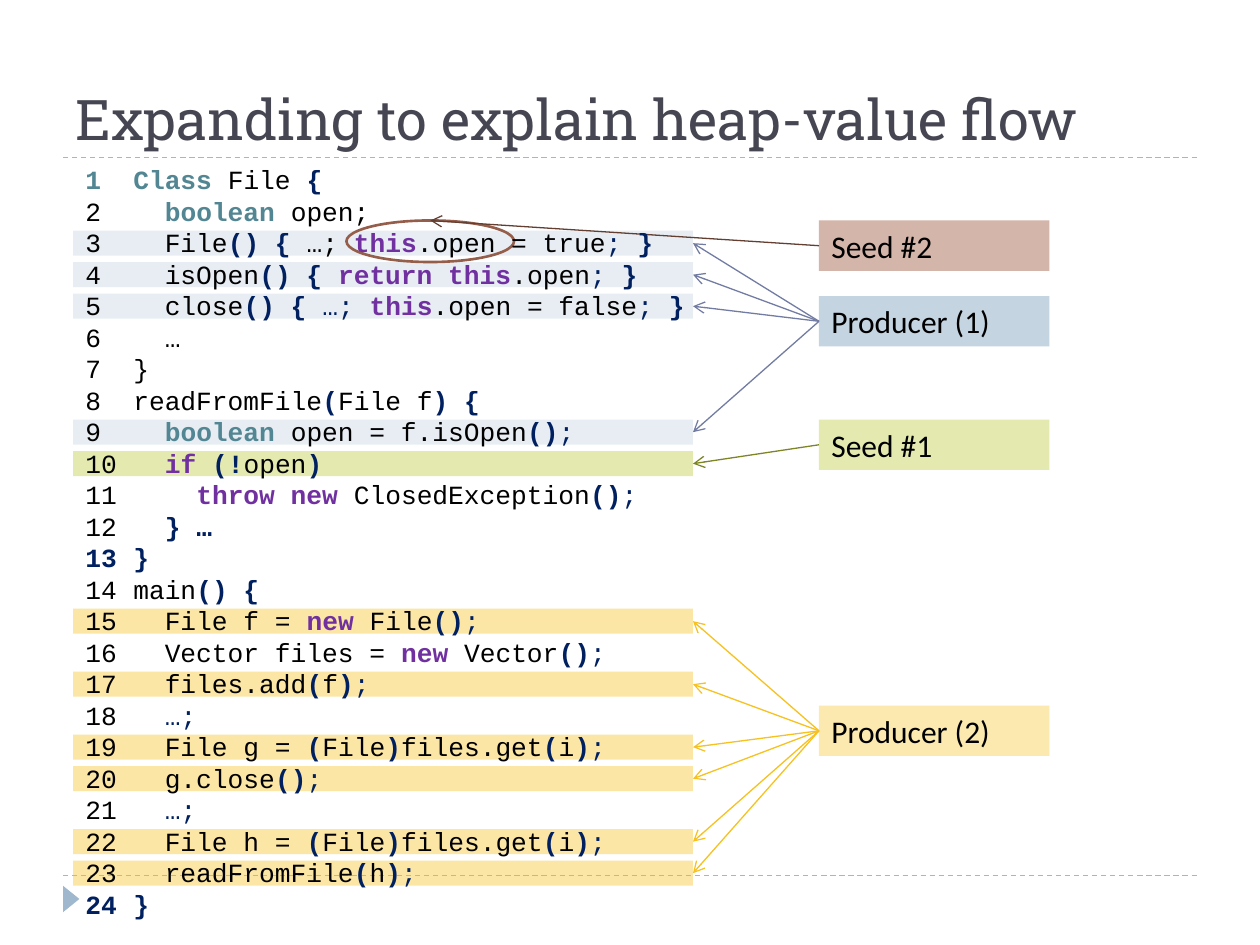
import pptx
import pptx.util
import pptx.dml.color
import pptx.enum.dml
import pptx.enum.shapes
import pptx.enum.text
import pptx.oxml.ns
import lxml.etree

Inch, Pt = pptx.util.Inches, pptx.util.Pt
RGB = pptx.dml.color.RGBColor
Shape = pptx.enum.shapes.MSO_SHAPE
Anchor = pptx.enum.text.MSO_ANCHOR
qn = pptx.oxml.ns.qn

BLACK = RGB(0, 0, 0)
NAVY = RGB(0x00, 0x20, 0x60)
TEAL = RGB(0x52, 0x86, 0x93)
PURPLE = RGB(0x70, 0x30, 0xA0)
SLATE = RGB(0x46, 0x46, 0x53)
STEEL = RGB(0x9F, 0xB8, 0xCD)
SKY = RGB(0xC5, 0xD4, 0xE1)
INDIGO = RGB(0x72, 0x7C, 0xA3)
GOLD = RGB(0xF7, 0xC1, 0x20)
CREAM = RGB(0xFC, 0xE9, 0xAF)
LIME = RGB(0xBC, 0xC8, 0x38)
PALE = RGB(0xE4, 0xE9, 0xAF)
OLIVE = RGB(0x7D, 0x85, 0x25)
ROSE = RGB(0xD4, 0xB5, 0xAA)
RUST = RGB(0x95, 0x5E, 0x4B)
BROWN = RGB(0x63, 0x3F, 0x32)

# Content: each code run is "style:text", runs are parted by "|"
TITLE = "Expanding to explain heap-value flow"
STYLES = {"k": (BLACK, False), "n": (NAVY, False), "b": (NAVY, True),
          "t": (TEAL, True), "p": (PURPLE, True)}
CODE = [
    "t:Class|k: File |b:{",
    "k:  |t:boolean|k: open;",
    "k:  File|b:() { |k:…; |p:this|k:.open = true|n:; |b:}",
    "k:  isOpen|b:() { |p:return this|k:.open|n:;|b: }",
    "k:  close|b:() { |n:…; |p:this|k:.open = false|n:; |b:}",
    "k:  …",
    "k:}",
    "k:readFromFile|b:(|k:File f|b:) {",
    "k:  |t:boolean|k: open = f.isOpen|b:()|n:;",
    "k:  |p:if |b:(!|k:open|b:)",
    "k:    |p:throw new |k:ClosedException|b:()|n:;",
    "k:  |b:} …",
    "b:}",
    "k:main|b:() {",
    "k:  File f = |p:new|k: File|b:()|n:;",
    "k:  Vector files = |p:new|k: Vector|b:()|n:;",
    "k:  files.add|b:(|k:f|b:)|n:;",
    "k:  |n:…;",
    "k:  File g = |b:(|k:File|b:)|k:files.get|b:(|k:i|b:)|n:;",
    "k:  g.close|b:()|n:;",
    "k:  |n:…;",
    "k:  File h = |b:(|k:File|b:)|k:files.get|b:(|k:i|b:)|n:;",
    "k:  readFromFile|b:(|k:h|b:)|n:;",
    "b:}",
]
# Label, top, label fill, band fill, arrow colour, code lines
NOTES = [
    ("Producer (1)", 2.35, SKY, SKY, INDIGO, [3, 4, 5, 9]),
    ("Producer (2)", 5.6, CREAM, GOLD, GOLD, [15, 17, 19, 20, 22, 23]),
    ("Seed #1", 3.33, PALE, LIME, OLIVE, [10]),
    ("Seed #2", 1.75, ROSE, None, BROWN, []),
]

# Grid, in inches
WIDE, HIGH = 10, 7.5
EDGE, RULES = 0.05 * WIDE, (6.95, 1.25)
LEFT, RIGHT, FIRST, STEP, BAND = 0.58, 5.5, 1.33, 0.25, 0.2
SIDE, BOXW, BOXH = 0.65 * WIDE, 1.83, 0.4
RING = (2.75, 1.75, 1.33, 0.33)

deck = pptx.Presentation()
deck.slide_width, deck.slide_height = Inch(WIDE), Inch(HIGH)
slide = deck.slides.add_slide(deck.slide_layouts[6])
shapes = slide.shapes


def row(num):
    return FIRST + STEP * (num - 1)


def write(par, text, font="Calibri", size=18, color=BLACK, bold=False):
    run = par.add_run()
    run.text = text
    run.font.name, run.font.size = font, Pt(size)
    run.font.color.rgb, run.font.bold = color, bold


def draw(kind, box, fill=None, line=None, alpha=None):
    item = shapes.add_shape(kind, *map(Inch, box))
    item.shadow.inherit = False
    if fill is None:
        item.fill.background()
    else:
        item.fill.solid()
        item.fill.fore_color.rgb = fill
    if alpha:
        tint = item.fill._xPr.find(".//" + qn("a:srgbClr"))
        lxml.etree.SubElement(tint, qn("a:alpha"), val=str(alpha * 1000))
    if line is None:
        item.line.fill.background()
    else:
        item.line.color.rgb, item.line.width = line, Pt(1.5)
    return item


def link(start, end, color, dash=False):
    item = shapes.add_connector(pptx.enum.shapes.MSO_CONNECTOR.STRAIGHT,
                                *map(Inch, start + end))
    item.line.color.rgb, item.line.width = color, Pt(0.75)
    if dash:
        item.line.dash_style = pptx.enum.dml.MSO_LINE.DASH
    else:
        lxml.etree.SubElement(item.line._get_or_add_ln(), qn("a:tailEnd"), type="arrow")
    lxml.etree.SubElement(item._element.spPr, qn("a:effectLst"))


def frame(box, anchor):
    body = shapes.add_textbox(*map(Inch, box)).text_frame
    body.word_wrap, body.vertical_anchor = True, anchor
    return body


# Dashed rules and corner mark
for y in RULES:
    link((EDGE, y), (WIDE - EDGE, y), STEEL, dash=True)
draw(Shape.ISOSCELES_TRIANGLE, (0.46, 7.07, 0.21, 0.13), STEEL).rotation = 90

# Bands, labels and arrows
for name, top, fill, tint, color, lines in NOTES:
    for num in lines:
        draw(Shape.RECTANGLE, (LEFT, row(num), RIGHT - LEFT, BAND), tint, alpha=40)
    label = draw(Shape.RECTANGLE, (SIDE, top, BOXW, BOXH), fill).text_frame
    label.vertical_anchor = Anchor.MIDDLE
    label.paragraphs[0].alignment = pptx.enum.text.PP_ALIGN.LEFT
    write(label.paragraphs[0], name)
    for num in lines:
        link((SIDE, top + BOXH / 2), (RIGHT, row(num) + BAND / 2), color)

# Ring round the second seed, its label is the last one
draw(Shape.OVAL, RING, line=RUST)
link((SIDE, top + BOXH / 2), (RING[0] + RING[2] / 2, RING[1]), color)

# Title
head = frame((EDGE, 0.17, WIDE - 2 * EDGE, 1.08), Anchor.BOTTOM)
write(head.paragraphs[0], TITLE, font="Roboto Slab", size=32, color=SLATE)

# Numbered code
body = frame((LEFT, 1.25, 5.33, 6.16), Anchor.TOP)
for num, line in enumerate(CODE):
    par = body.add_paragraph() if num else body.paragraphs[0]
    par.line_spacing = Pt(STEP * 72)
    props = par._p.get_or_add_pPr()
    props.set("marL", str(Inch(0.38)))
    props.set("indent", str(-Inch(0.38)))
    lxml.etree.SubElement(props, qn("a:buFont"), typeface="+mj-lt")
    lxml.etree.SubElement(props, qn("a:buAutoNum"), type="arabicPlain")
    for part in line.split("|"):
        key, text = part.split(":", 1)
        color, bold = STYLES[key]
        write(par, text, font="Courier New", size=15, color=color, bold=bold)

deck.save("out.pptx")
